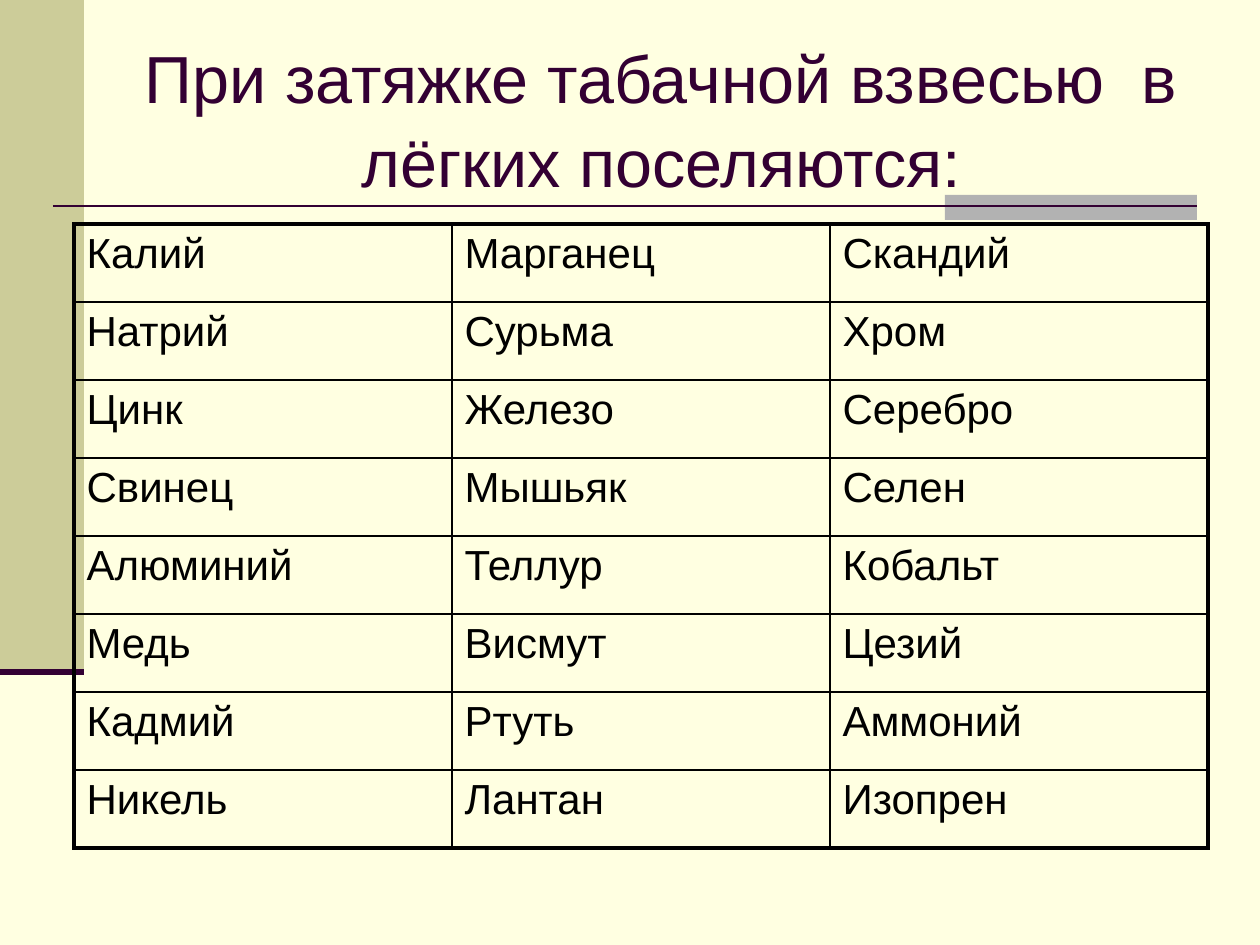
from typing import NamedTuple

from lxml.etree import SubElement
from pptx import Presentation
from pptx.dml.color import RGBColor
from pptx.enum.shapes import MSO_CONNECTOR as Connector, MSO_SHAPE as Shape
from pptx.enum.text import MSO_ANCHOR as Anchor, PP_ALIGN as Align
from pptx.oxml.ns import qn
from pptx.util import Emu, Pt

PX_PER_INCH = 126
BACKGROUND, PLUM, BLACK = "FFFFE1", "330033", "000000"
THIN, THICK = 1, 2.25


class Block(NamedTuple):
    left: int
    top: int
    width: int
    height: int
    fill: str


class Rule(NamedTuple):
    left: int
    right: int
    y: int
    weight: float


BLOCKS = [Block(0, 0, 84, 672, "CCCC99"), Block(945, 195, 252, 25, "B2B2B2")]
RULES = [Rule(53, 1197, 206, 1.5), Rule(0, 84, 672, 3.5)]
SUBSTANCES = [
    ("Калий", "Марганец", "Скандий"),
    ("Натрий", "Сурьма", "Хром"),
    ("Цинк", "Железо", "Серебро"),
    ("Свинец", "Мышьяк", "Селен"),
    ("Алюминий", "Теллур", "Кобальт"),
    ("Медь", "Висмут", "Цезий"),
    ("Кадмий", "Ртуть", "Аммоний"),
    ("Никель", "Лантан", "Изопрен"),
]


def px(length: int) -> Emu:
    """Turn pixels into EMU."""
    return Emu(round(length * 914400 / PX_PER_INCH))


def rgb(code: str) -> RGBColor:
    """Turn a hex string into a colour."""
    return RGBColor.from_string(code)


def write(frame, text: str, *, size: float, color: str = BLACK,
          align: Align = Align.LEFT, spacing: float = 1.0) -> None:
    """Put one formatted paragraph into a text frame."""
    frame.word_wrap = True
    paragraph = frame.paragraphs[0]
    paragraph.alignment = align
    paragraph.line_spacing = spacing
    run = paragraph.add_run()
    run.text = text
    run.font.name = "Arial"
    run.font.size = Pt(size)
    run.font.color.rgb = rgb(color)


def draw_block(slide, block: Block) -> None:
    """Draw a plain filled rectangle."""
    panel = slide.shapes.add_shape(Shape.RECTANGLE, *map(px, block[:4]))
    panel.shadow.inherit = False
    panel.fill.solid()
    panel.fill.fore_color.rgb = rgb(block.fill)
    panel.line.fill.background()


def draw_rule(slide, rule: Rule) -> None:
    """Draw a horizontal line."""
    ends = map(px, (rule.left, rule.y, rule.right, rule.y))
    line = slide.shapes.add_connector(Connector.STRAIGHT, *ends)
    line.line.color.rgb = rgb(PLUM)
    line.line.width = Pt(rule.weight)
    SubElement(line._element.spPr, qn("a:effectLst"))


def set_borders(cell, weights: dict[str, float]) -> None:
    """Give each side of a cell a black border of its own weight."""
    properties = cell._tc.get_or_add_tcPr()
    for position, (side, weight) in enumerate(weights.items()):
        border = SubElement(properties, qn(f"a:{side}"), w=str(Pt(weight)))
        fill = SubElement(border, qn("a:solidFill"))
        SubElement(fill, qn("a:srgbClr"), val=BLACK)
        properties.insert(position, border)


def draw_table(slide, rows: list[tuple[str, ...]]) -> None:
    """Draw the grid of substances with a thick outer frame."""
    row_count, column_count = len(rows), len(rows[0])
    table = slide.shapes.add_table(row_count, column_count, px(74), px(224),
                                   px(378 * column_count), px(78 * row_count)).table
    table.first_row = table.horz_banding = False
    for r, names in enumerate(rows):
        for c, name in enumerate(names):
            cell = table.cell(r, c)
            cell.fill.background()
            write(cell.text_frame, name, size=24)
            set_borders(cell, {
                "lnL": THICK if c == 0 else THIN,
                "lnR": THICK if c == column_count - 1 else THIN,
                "lnT": THICK if r == 0 else THIN,
                "lnB": THICK if r == row_count - 1 else THIN,
            })


def main() -> None:
    """Build the slide and save it."""
    deck = Presentation()
    deck.slide_width, deck.slide_height = px(1260), px(945)
    slide = deck.slides.add_slide(deck.slide_layouts[6])
    slide.background.fill.solid()
    slide.background.fill.fore_color.rgb = rgb(BACKGROUND)
    for block in BLOCKS:
        draw_block(slide, block)
    for rule in RULES:
        draw_rule(slide, rule)
    title = slide.shapes.add_textbox(px(126), px(38), px(1071), px(158)).text_frame
    title.vertical_anchor = Anchor.MIDDLE
    write(title, "При затяжке табачной взвесью  в лёгких поселяются:",
          size=38, color=PLUM, align=Align.CENTER, spacing=1.05)
    draw_table(slide, SUBSTANCES)
    deck.save("out.pptx")


if __name__ == "__main__":
    main()
